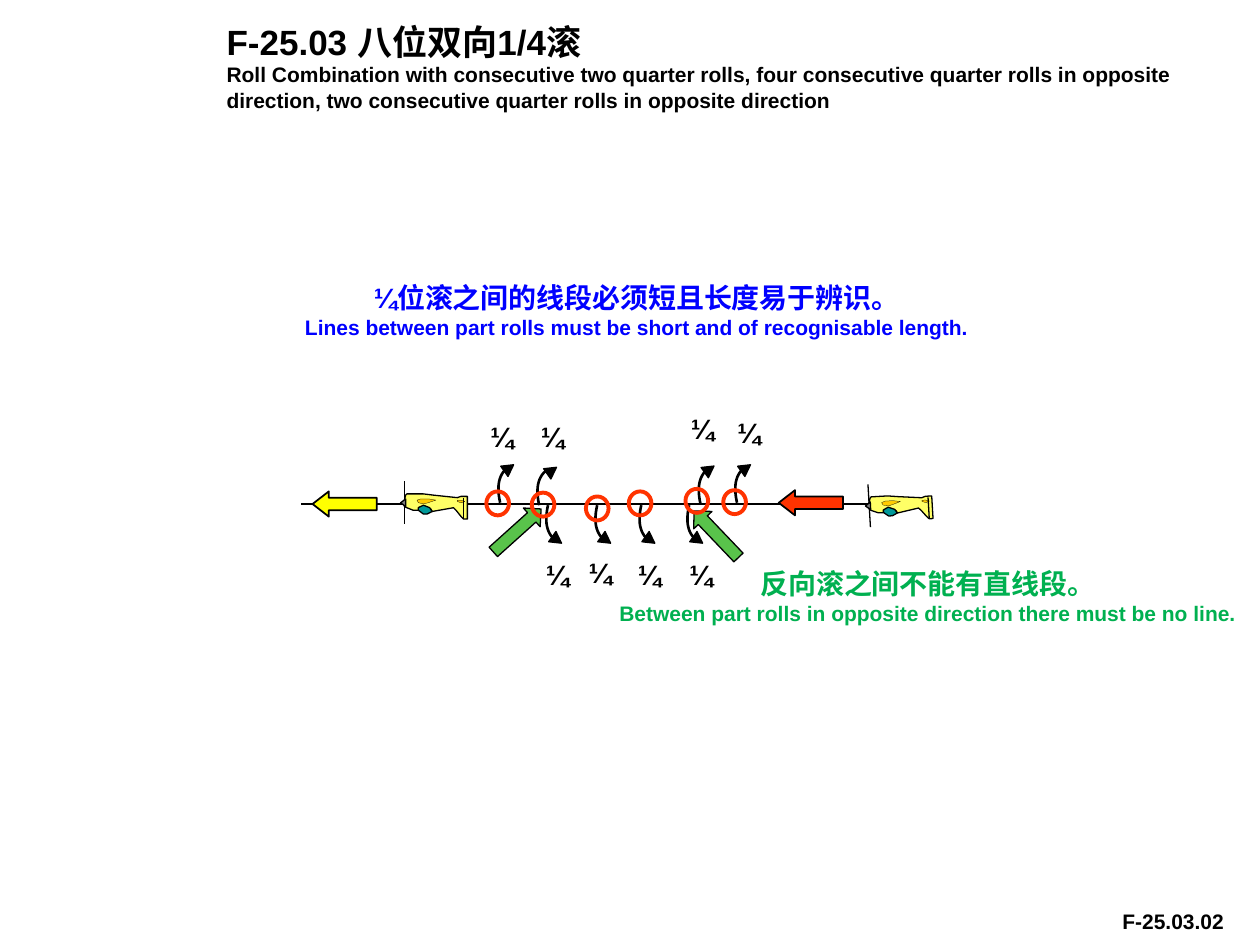
from dataclasses import dataclass
from math import cos, radians, sin

from lxml import etree
from pptx import Presentation
from pptx import util as u
from pptx.dml.color import RGBColor
from pptx.enum import shapes, text
from pptx.oxml.ns import qn

COLOURS = {
    "black": "000000", "blue": "0000FF", "note": "00B050", "pointer": "59C34B",
    "red": "FF3300", "yellow": "FFFF00", "body": "FFFF66", "wing": "009999",
    "canopy": "FFCC00", "nose": "808080",
}
FONT = "Arial"

# Plane outlines, measured from the middle of the fuselage
FUSELAGE = [
    (-0.14, 0.03), (-0.18, 0.03), (-0.23, 0.01), (-0.25, 0), (-0.25, -0.05),
    (-0.24, -0.09), (-0.23, -0.1), (-0.1, -0.1), (-0.02, -0.09), (0.17, -0.07),
    (0.2, -0.08), (0.25, -0.08), (0.25, 0.1), (0.22, 0.1), (0.2, 0.08),
    (0.16, 0.03), (0.14, 0.01), (-0.03, 0.04), (-0.04, 0.02), (-0.1, 0),
    (-0.12, 0.01),
]
WING = [(-0.03, 0.04), (-0.05, 0.01), (-0.1, -0.01), (-0.14, 0.01),
        (-0.14, 0.03), (-0.1, 0.06), (-0.07, 0.06)]
CANOPY = [(0, -0.05), (-0.06, -0.03), (-0.1, -0.02), (-0.14, -0.03),
          (-0.15, -0.05), (-0.12, -0.06), (-0.06, -0.06)]
TAIL_MARK = [(0.23, -0.04), (0.2, -0.05), (0.17, -0.05), (0.17, -0.04),
             (0.2, -0.03)]
# Bezier control points of a quarter roll, measured from its start
ROLL_CURVE = [(0, 0), (-0.03, -0.13), (-0.01, -0.22), (0.05, -0.27)]


@dataclass
class Roll:
    x: float
    y: float
    up: bool
    head_dx: float = 0.07


@dataclass
class Arrow:
    x: float
    y: float
    turn: float
    colour: str
    head: float
    line: float


@dataclass
class Line:
    words: str
    size: float


@dataclass
class Caption:
    x: float
    y: float
    width: float
    height: float
    lines: list[Line]
    colour: str = "black"
    align: text.PP_ALIGN = text.PP_ALIGN.CENTER
    indent: float = 0


ROLLS = [
    Roll(5.56, 4, True), Roll(5.47, 4.01, False), Roll(5.09, 4.01, False),
    Roll(4.74, 4.01, False), Roll(5.85, 3.99, True), Roll(4.35, 4.01, False),
    Roll(4.28, 4.01, True, 0.1), Roll(3.97, 3.99, True),
]
COURSE_ARROWS = [Arrow(6.18, 3.89, 180, "red", 0.645, 1),
                 Arrow(2.48, 3.9, 180, "yellow", 0.645, 1)]
POINTERS = [Arrow(3.85, 4.11, 318.1, "pointer", 0.5, 0.75),
            Arrow(5.43, 4.14, 226.3, "pointer", 0.5, 0.75)]
QUARTERS = [(5.31, 3.25), (4.94, 3.22), (4.93, 4.38), (4.52, 4.38),
            (4.13, 4.36), (3.79, 4.38), (3.75, 3.28), (3.35, 3.28)]
RINGS = [(3.86, 3.9), (4.22, 3.91), (4.65, 3.94), (4.99, 3.9), (5.44, 3.88),
         (5.74, 3.89)]
CAPTIONS = [
    Caption(8.81, 7.16, 1.1, 0.3, [Line("F-25.03.02", 12)],
            align=text.PP_ALIGN.LEFT),
    Caption(1.11, 0.11, 8.63, 0.83, [
        Line("F-25.03 八位双向1/4滚", 20),
        Line("Roll Combination with consecutive two quarter rolls, four "
             "consecutive quarter rolls in opposite direction, two "
             "consecutive quarter rolls in opposite direction", 12),
    ], align=text.PP_ALIGN.LEFT, indent=0.59),
    Caption(2.1, 2.18, 5.91, 0.57, [
        Line("¼位滚之间的线段必须短且长度易于辨识。", 16),
        Line("Lines between part rolls must be short and of recognisable "
             "length.", 12),
    ], "blue"),
    Caption(4.76, 4.45, 5.21, 0.57, [
        Line("反向滚之间不能有直线段。", 16),
        Line("Between part rolls in opposite direction there must be no "
             "line.", 12),
    ], "note"),
]


def rgb(name: str) -> RGBColor:
    return RGBColor.from_string(COLOURS[name])


def paint(shape, fill: str | None, line: str = "black", width: float = 0.75) -> None:
    shape.shadow.inherit = False
    if fill:
        shape.fill.solid()
        shape.fill.fore_color.rgb = rgb(fill)
    else:
        shape.fill.background()
    shape.line.color.rgb = rgb(line)
    shape.line.width = u.Pt(width)


def draw_preset(parent, kind, x: float, y: float, width: float, height: float):
    return parent.add_shape(kind, *map(u.Inches, (x, y, width, height)))


def draw_line(parent, start: tuple, end: tuple) -> None:
    line = parent.add_connector(shapes.MSO_CONNECTOR.STRAIGHT,
                                *map(u.Inches, (*start, *end)))
    line.line.color.rgb = rgb("black")
    line.line.width = u.Pt(0.75)
    etree.SubElement(line._element.spPr, qn("a:effectLst"))


def draw_outline(parent, points: list, fill: str | None, width: float) -> None:
    spots = [(u.Inches(x), u.Inches(y)) for x, y in points]
    builder = parent.build_freeform(*spots[0])
    builder.add_line_segments(spots[1:], close=fill is not None)
    paint(builder.convert_to_shape(), fill, width=width)


def draw_plane(page, x: float, y: float, tilt: float) -> None:
    parent = page.shapes.add_group_shape().shapes
    c, s = cos(radians(tilt)), sin(radians(tilt))

    def place(point: tuple) -> tuple:
        px, py = point
        return x + px * c - py * s, y + px * s + py * c

    draw_line(parent, place((-0.25, -0.2)), place((-0.25, 0.14)))  # propeller
    for outline, fill, width in [(FUSELAGE, "body", 0.75), (WING, "wing", 0.75),
                                 (CANOPY, "canopy", 0.13),
                                 (TAIL_MARK, "canopy", 0.13)]:
        draw_outline(parent, [place(point) for point in outline], fill, width)
    draw_line(parent, place((0.22, -0.07)), place((0.22, 0.1)))  # rudder
    nose_x, nose_y = place((-0.26, -0.03))
    nose = draw_preset(parent, shapes.MSO_SHAPE.ISOSCELES_TRIANGLE,
                       nose_x - 0.03, nose_y - 0.02, 0.06, 0.04)
    nose.rotation = 270 + tilt
    paint(nose, "nose")


def draw_roll(page, roll: Roll, steps: int = 12) -> None:
    parent = page.shapes.add_group_shape().shapes
    side = 1 if roll.up else -1
    points = []
    for step in range(steps + 1):
        t = step / steps
        weights = ((1 - t) ** 3, 3 * t * (1 - t) ** 2, 3 * t * t * (1 - t), t ** 3)
        dx, dy = (sum(w * p[axis] for w, p in zip(weights, ROLL_CURVE))
                  for axis in (0, 1))
        points.append((roll.x + dx, roll.y + side * dy))
    draw_outline(parent, points, None, 1.5)
    head = draw_preset(parent, shapes.MSO_SHAPE.ISOSCELES_TRIANGLE,
                       roll.x + roll.head_dx - 0.05,
                       roll.y - side * 0.275 - 0.045, 0.1, 0.09)
    head.rotation = 54.5 if roll.up else 125.5
    paint(head, "black")


def draw_arrow(page, arrow: Arrow) -> None:
    shape = draw_preset(page.shapes, shapes.MSO_SHAPE.RIGHT_ARROW,
                        arrow.x, arrow.y, 0.51, 0.2)
    shape.adjustments[0], shape.adjustments[1] = 0.5, arrow.head
    shape.rotation = arrow.turn
    paint(shape, arrow.colour, width=arrow.line)


def draw_caption(page, caption: Caption) -> None:
    box = page.shapes.add_textbox(*map(u.Inches, (
        caption.x, caption.y, caption.width, caption.height)))
    frame = box.text_frame
    frame.word_wrap = True
    frame.text = "\n".join(line.words for line in caption.lines)
    for para, line in zip(frame.paragraphs, caption.lines):
        para.alignment = caption.align
        if caption.indent:
            para._p.get_or_add_pPr().set("marL", str(u.Inches(caption.indent)))
        for span in para.runs:
            span.font.name = FONT
            span.font.size = u.Pt(line.size)
            span.font.bold = True
            span.font.color.rgb = rgb(caption.colour)


def main() -> None:
    deck = Presentation()
    deck.slide_width, deck.slide_height = u.Inches(10), u.Inches(7.5)
    page = deck.slides.add_slide(deck.slide_layouts[6])

    # Flight line, planes and rolls
    draw_line(page.shapes, (7.12, 4), (2.39, 4))
    draw_plane(page, 7.15, 4.03, -3.3)
    draw_plane(page, 3.46, 4.02, 0)
    for roll in ROLLS:
        draw_roll(page, roll)

    # Direction arrows, quarter labels and pointers
    for arrow in COURSE_ARROWS:
        draw_arrow(page, arrow)
    for x, y in QUARTERS:
        draw_caption(page, Caption(x, y, 1.27, 0.37, [Line("¼", 16)]))
    for arrow in POINTERS:
        draw_arrow(page, arrow)

    # Rings marking each roll
    for x, y in RINGS:
        ring = draw_preset(page.shapes, shapes.MSO_SHAPE.OVAL, x, y, 0.18, 0.19)
        paint(ring, None, "red", 2.25)

    # Title, notes and figure number
    for caption in CAPTIONS:
        draw_caption(page, caption)
    deck.save("out.pptx")


if __name__ == "__main__":
    main()
